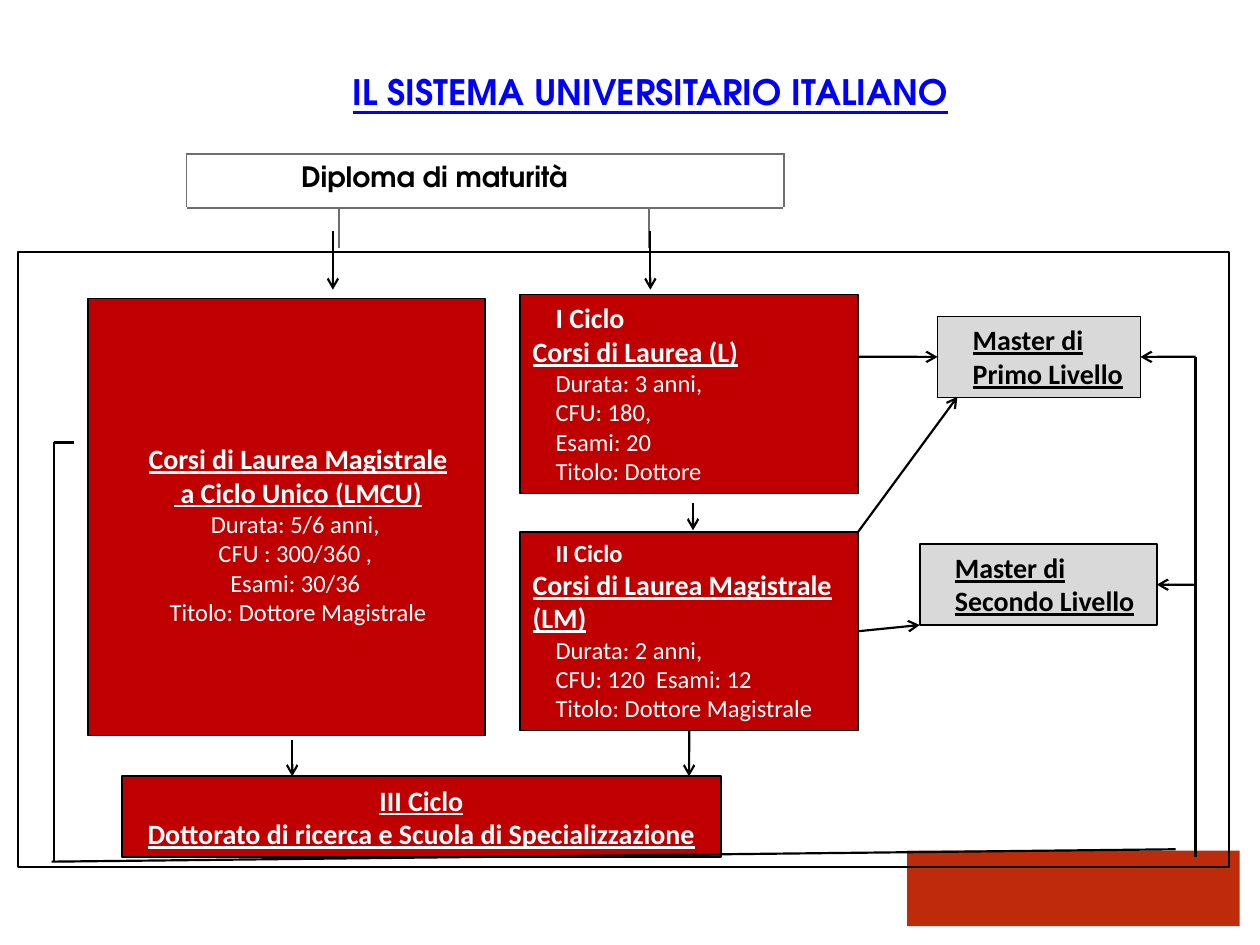
import copy

import pptx
import pptx.util
from pptx.dml.color import RGBColor
from pptx.enum.shapes import MSO_CONNECTOR, MSO_SHAPE
from pptx.enum.text import MSO_ANCHOR, PP_ALIGN
from pptx.oxml import parse_xml
from pptx.oxml.ns import nsdecls, qn
from pptx.util import Cm

BLACK = RGBColor(0x00, 0x00, 0x00)
WHITE = RGBColor(0xFF, 0xFF, 0xFF)
BLUE = RGBColor(0x00, 0x00, 0xFF)
RED = RGBColor(0xC0, 0x00, 0x00)
BRICK = RGBColor(0xBD, 0x2B, 0x0B)
GREY = RGBColor(0xD9, 0xD9, 0xD9)
RULE = RGBColor(0x6D, 0x6E, 0x71)

# Run formats: size, bold, underline
HEAD = (16, True, True)
PLAIN_HEAD = (16, True, False)
SMALL_HEAD = (14, True, False)
BODY = (14, False, False)


class Slide:
    title_font = "TeX Gyre Adventor"
    body_font = "Calibri"
    indent = Cm(0.46)

    def __init__(self, prs):
        self.s = prs.slides.add_slide(prs.slide_layouts[6])

    def style(self, r, fmt, color, font):
        r.font.size = pptx.util.Pt(fmt[0])
        r.font.bold, r.font.underline = fmt[1:]
        r.font.name = font
        r.font.color.rgb = color

    def add_text(self, tf, paragraphs, color, align=PP_ALIGN.LEFT, indent=0, font=body_font):
        """Each paragraph is its text and one format per line of it."""
        tf.word_wrap = True
        for i, (text, *formats) in enumerate(paragraphs):
            p = tf.paragraphs[0] if i == 0 else tf.add_paragraph()
            p.text = text
            p.alignment = align
            if indent:
                p._p.get_or_add_pPr().set("indent", str(indent))
            for r, fmt in zip(p.runs, formats):
                self.style(r, fmt, color, font)
            for br in p._p.findall(qn("a:br")):
                br.append(copy.deepcopy(p.runs[0].font._element))

    def title(self, text, x, y, w, h):
        sp = self.s.shapes.add_textbox(Cm(x), Cm(y), Cm(w), Cm(h))
        self.add_text(sp.text_frame, [(text, (20, True, True))], BLUE,
                      PP_ALIGN.CENTER, font=self.title_font)

    def box(self, x, y, w, h, fill=None, line=BLACK, width=1, paragraphs=(),
            color=WHITE, align=PP_ALIGN.LEFT, indent=0, anchor=MSO_ANCHOR.TOP):
        sp = self.s.shapes.add_shape(MSO_SHAPE.RECTANGLE, Cm(x), Cm(y), Cm(w), Cm(h))
        sp.shadow.inherit = False
        if fill is None:
            sp.fill.background()
        else:
            sp.fill.solid()
            sp.fill.fore_color.rgb = fill
        if line is None:
            sp.line.fill.background()
        else:
            sp.line.color.rgb = line
            sp.line.width = pptx.util.Pt(width)
        sp.text_frame.vertical_anchor = anchor
        if paragraphs:
            self.add_text(sp.text_frame, paragraphs, color, align, indent)
        return sp

    def line(self, x1, y1, x2, y2, arrow=True, begin=None, end=None):
        c = self.s.shapes.add_connector(MSO_CONNECTOR.STRAIGHT, Cm(x1), Cm(y1), Cm(x2), Cm(y2))
        c.line.color.rgb = BLACK
        c.line.width = pptx.util.Pt(1.25)
        if arrow:
            c.line._get_or_add_ln().append(
                parse_xml(f'<a:tailEnd {nsdecls("a")} type="arrow"/>'))
        c._element.spPr.append(parse_xml(f'<a:effectLst {nsdecls("a")}/>'))
        if begin:
            c.begin_connect(*begin)
        if end:
            c.end_connect(*end)

    def borders(self, cell, sides):
        tcPr = cell._tc.get_or_add_tcPr()
        for i, side in enumerate(sides):
            tcPr.insert(i, parse_xml(
                f'<a:ln{side} {nsdecls("a")} w="12700"><a:solidFill>'
                f'<a:srgbClr val="{RULE}"/></a:solidFill></a:ln{side}>'))

    def diploma_table(self, text, x, y, cols, rows):
        t = self.s.shapes.add_table(len(rows), len(cols), Cm(x), Cm(y),
                                    Cm(sum(cols)), Cm(sum(rows))).table
        t.first_row = t.horz_banding = False
        for col, w in zip(t.columns, cols):
            col.width = Cm(w)
        for row, h in zip(t.rows, rows):
            row.height = Cm(h)
        for cell in t.iter_cells():
            cell.fill.background()
            cell.margin_left = cell.margin_right = cell.margin_top = cell.margin_bottom = 0
            cell.text_frame.paragraphs[0].font.size = pptx.util.Pt(10)
        for cell in t.rows[0].cells:
            self.borders(cell, "LRTB")
        for cell, sides in zip(t.rows[1].cells, ("RT", "LRT", "LT")):
            self.borders(cell, sides)
        head = t.cell(0, 0)
        head.merge(t.cell(0, len(cols) - 1))
        head.margin_left, head.margin_top = Cm(2.31), Cm(0.18)
        p = head.text_frame.paragraphs[0]
        p.text = text
        p.line_spacing = 1.15
        self.style(p.runs[0], PLAIN_HEAD, BLACK, self.title_font)


def main():
    prs = pptx.Presentation()
    prs.slide_width, prs.slide_height = Cm(25.4), Cm(19.05)
    s = Slide(prs)

    # Corner block, title and entry requirement
    s.box(18.29, 17.15, 6.7, 1.52, BRICK, None)
    s.title("IL SISTEMA UNIVERSITARIO ITALIANO", 1.68, 1.3, 22.86, 2)
    s.diploma_table("Diploma di maturità", 3.76, 3.1, (3.07, 6.25, 2.72), (1.09, 0.79))

    # Degree courses
    single = s.box(1.78, 6.02, 8, 8.81, RED, paragraphs=[
        ("Corsi di Laurea Magistrale", HEAD),
        (" a Ciclo Unico (LMCU)", HEAD),
        ("Durata: 5/6 anni, ", BODY),
        ("CFU : 300/360 , ", BODY),
        ("Esami: 30/36 ", BODY),
        ("Titolo: Dottore Magistrale", BODY),
    ], align=PP_ALIGN.CENTER, indent=s.indent, anchor=MSO_ANCHOR.MIDDLE)
    single.text_frame.margin_top, single.text_frame.margin_bottom = Cm(0.76), Cm(0.08)
    s.box(10.49, 5.94, 6.81, 4.01, RED, paragraphs=[
        ("I Ciclo \vCorsi di Laurea (L)", PLAIN_HEAD, HEAD),
        ("Durata: 3 anni,", BODY),
        ("CFU: 180,", BODY),
        ("Esami: 20", BODY),
        ("Titolo: Dottore", BODY),
    ], indent=s.indent)
    second = s.box(10.49, 10.72, 6.81, 4.01, RED, paragraphs=[
        ("II Ciclo \vCorsi di Laurea Magistrale (LM)", SMALL_HEAD, HEAD),
        ("Durata: 2 anni,", BODY),
        ("CFU: 120  Esami: 12", BODY),
        ("Titolo: Dottore Magistrale", BODY),
    ], indent=s.indent)

    # Masters and third cycle
    master1, master2 = (
        s.box(x, y, w, 1.63, GREY, width=width, color=BLACK, indent=s.indent,
              paragraphs=[("Master di", HEAD), (level, HEAD)])
        for x, y, w, width, level in ((18.9, 6.38, 4.09, 0.75, "Primo Livello"),
                                      (18.54, 10.97, 4.78, 1, "Secondo Livello")))
    s.box(2.46, 15.65, 12.07, 1.63, RED, paragraphs=[
        ("III Ciclo", HEAD),
        ("Dottorato di ricerca e Scuola di Specializzazione", HEAD),
    ], align=PP_ALIGN.CENTER, anchor=MSO_ANCHOR.MIDDLE)

    # Arrows between the cycles and to the masters
    s.line(5.89, 14.91, 5.89, 15.65)
    s.line(13.97, 10.13, 13.97, 10.69)
    s.line(13.89, 14.73, 13.89, 15.65, begin=(second, 2))
    s.line(17.3, 7.19, 18.9, 7.19, end=(master1, 1))
    s.line(17.3, 10.72, 19.3, 8)
    s.line(17.3, 12.73, 18.54, 12.6, begin=(second, 3))

    # Path from the single cycle round to the masters
    s.line(1.09, 8.92, 1.5, 8.92, arrow=False)
    s.line(1.09, 8.92, 1.09, 17.37, arrow=False)
    s.line(1.04, 17.37, 23.7, 17.12, arrow=False)
    s.line(24.1, 7.19, 24.1, 17.27, arrow=False)
    s.line(24.1, 7.19, 22.99, 7.19, end=(master1, 3))
    s.line(24.1, 11.79, 23.32, 11.79, end=(master2, 3))

    # Frame and the arrows leading into it
    s.box(0.36, 5.08, 24.41, 12.4)
    for x in (6.71, 13.11):
        s.line(x, 4.65, x, 5.84)

    prs.save("out.pptx")


if __name__ == "__main__":
    main()
